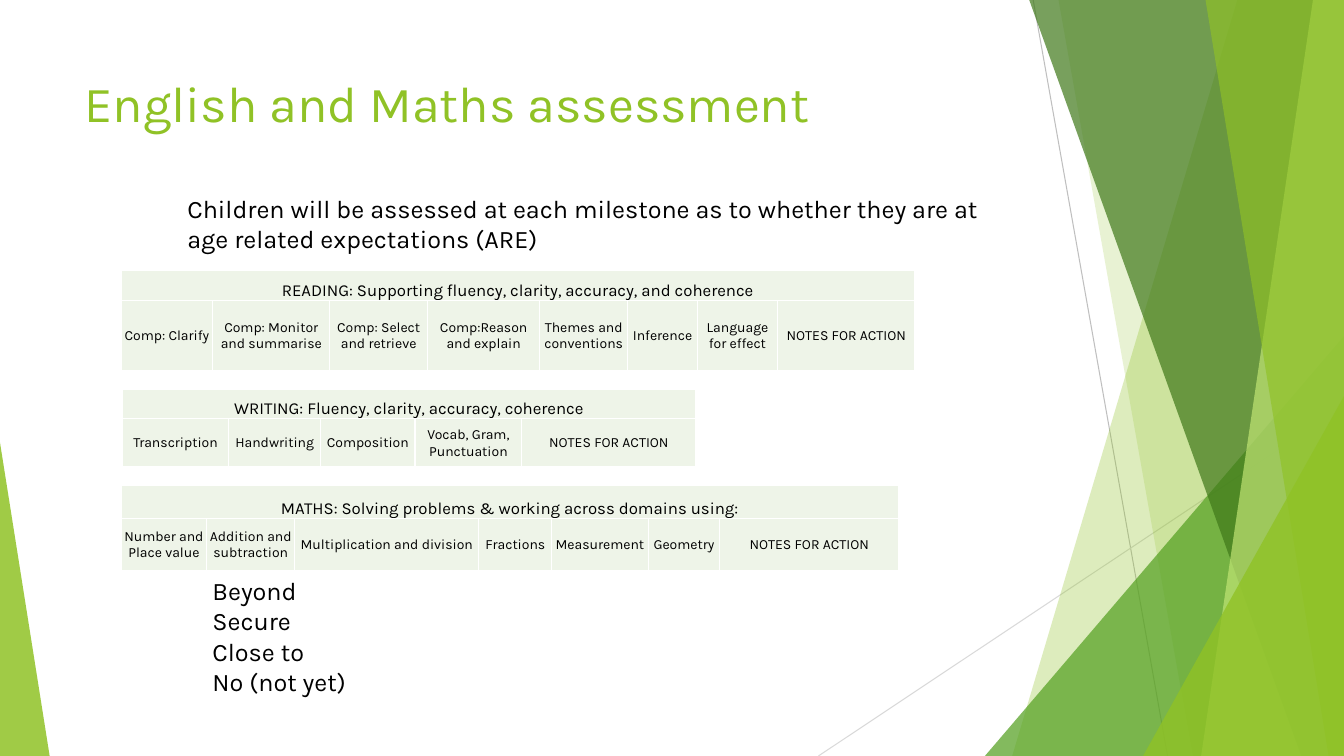
import pptx
import pptx.util
import pptx.dml.color
import pptx.enum.shapes
import pptx.enum.text
import pptx.oxml
import pptx.oxml.ns
from dataclasses import dataclass

Pt = pptx.util.Pt
WIDE, HIGH = 960, 540
FONT = "Karla"
GREEN = "90C226"
BLACK = "000000"
PALE = "EEF4E8"
WHITE = "FFFFFF"
NOTES = "NOTES FOR ACTION"


@dataclass
class Ray:
    start: tuple[float, float]
    end: tuple[float, float]
    hue: str


@dataclass
class Facet:
    top: float
    foot: float
    hue: str
    alpha: int


@dataclass
class Wedge:
    left: float
    top: float
    width: float
    apex: int
    hue: str
    alpha: int


@dataclass
class Note:
    box: tuple[float, float, float, float]
    lines: list[str]
    size: float
    hue: str
    wrap: bool


@dataclass
class Grid:
    left: float
    top: float
    rows: tuple[float, float]
    title: str
    cols: list[tuple[str, float]]


RAYS = [
    Ray((738, 0), (834, 540), "BFBFBF"),
    Ray((960, 290), (584.6, 540), "D9D9D9"),
]
DECOR = [
    Facet(884, 723, GREEN, 30),
    Facet(756, 852, GREEN, 20),
    Wedge(703.5, 240, 256.5, 1, "54A021", 72),
    Facet(735, 929.5, "3F7819", 70),
    Facet(938, 858, "C0E474", 70),
    Facet(861, 949, GREEN, 65),
    Wedge(816.5, 283, 143.5, 1, GREEN, 80),
    Wedge(0, 316, 35.5, 0, GREEN, 85),
]
NOTE_LIST = [
    Note((53.3, 48.2, 677, 104), ["English and Maths assessment"], 36, GREEN, True),
    Note((126.7, 134.6, 582.5, 72.7),
         ["Children will be assessed at each milestone as to whether they are at",
          "age related expectations (ARE)"], 18, BLACK, False),
    Note((144.7, 407.5, 113, 94.3),
         ["Beyond", "Secure", "Close to", "No (not yet)"], 18, BLACK, False),
]
GRIDS = [
    Grid(86.4, 193, (21.6, 50.2),
         "READING: Supporting fluency, clarity, accuracy, and coherence",
         [("Comp: Clarify", 65.6), ("Comp: Monitor and summarise", 83.5),
          ("Comp: Select and retrieve", 70), ("Comp:Reason and explain", 80),
          ("Themes and conventions", 63), ("Inference", 49.6),
          ("Language for effect", 57.5), (NOTES, 98)]),
    Grid(87.4, 278.2, (21, 34.2),
         "WRITING: Fluency, clarity, accuracy, coherence",
         [("Transcription", 76), ("Handwriting", 65.6), ("Composition", 67.5),
          ("Vocab, Gram, Punctuation", 76.2), (NOTES, 124.4)]),
    Grid(86.4, 347, (23.2, 37.2),
         "MATHS: Solving problems & working across domains using:",
         [("Number and Place value", 61.3), ("Addition and subtraction", 62.8),
          ("Multiplication and division", 131.6), ("Fractions", 52),
          ("Measurement", 69), ("Geometry", 51), (NOTES, 128)]),
]


def shade(hue: str):
    return pptx.dml.color.RGBColor.from_string(hue)


def dress(para, size: float, hue: str) -> None:
    para.font.name = FONT
    para.font.size = Pt(size)
    para.font.color.rgb = shade(hue)


def tint(shape, hue: str, alpha: int) -> None:
    shape.shadow.inherit = False
    shape.line.fill.background()
    shape.fill.solid()
    shape.fill.fore_color.rgb = shade(hue)
    tone = shape.fill._xPr.find(".//" + pptx.oxml.ns.qn("a:srgbClr"))
    tone.append(pptx.oxml.parse_xml(
        f'<a:alpha {pptx.oxml.ns.nsdecls("a")} val="{alpha * 1000}"/>'))


def draw_ray(slide, ray: Ray) -> None:
    line = slide.shapes.add_connector(
        pptx.enum.shapes.MSO_CONNECTOR.STRAIGHT,
        *(Pt(n) for n in ray.start + ray.end))
    line.line.color.rgb = shade(ray.hue)
    line.line.width = Pt(0.75)
    line._element.spPr.append(pptx.oxml.parse_xml(
        f'<a:effectLst {pptx.oxml.ns.nsdecls("a")}/>'))


def draw_facet(slide, facet: Facet) -> None:
    path = slide.shapes.build_freeform(Pt(facet.top), Pt(-0.6))
    path.add_line_segments([(Pt(WIDE), Pt(-0.6)), (Pt(WIDE), Pt(HIGH)),
                            (Pt(facet.foot), Pt(HIGH))], close=True)
    tint(path.convert_to_shape(), facet.hue, facet.alpha)


def draw_wedge(slide, wedge: Wedge) -> None:
    shape = slide.shapes.add_shape(
        pptx.enum.shapes.MSO_SHAPE.ISOSCELES_TRIANGLE,
        Pt(wedge.left), Pt(wedge.top), Pt(wedge.width), Pt(HIGH - wedge.top))
    shape.adjustments[0] = wedge.apex
    tint(shape, wedge.hue, wedge.alpha)


def draw_note(slide, note: Note) -> None:
    frame = slide.shapes.add_textbox(*(Pt(n) for n in note.box)).text_frame
    frame.word_wrap = note.wrap
    frame.text = "\n".join(note.lines)
    for para in frame.paragraphs:
        dress(para, note.size, note.hue)


def fill_cell(cell, text: str, size: float, anchor) -> None:
    cell.text = text
    cell.vertical_anchor = anchor
    cell.margin_left = cell.margin_right = cell.margin_top = Pt(0.7)
    cell.margin_bottom = 0
    cell.fill.solid()
    cell.fill.fore_color.rgb = shade(PALE)
    para = cell.text_frame.paragraphs[0]
    para.alignment = pptx.enum.text.PP_ALIGN.CENTER
    dress(para, size, BLACK)
    props = cell._tc.get_or_add_tcPr()
    for spot, side in enumerate("LRTB"):
        props.insert(spot, pptx.oxml.parse_xml(
            f'<a:ln{side} {pptx.oxml.ns.nsdecls("a")} w="12700"><a:solidFill>'
            f'<a:srgbClr val="{WHITE}"/></a:solidFill></a:ln{side}>'))


def draw_grid(slide, grid: Grid) -> None:
    count = len(grid.cols)
    table = slide.shapes.add_table(
        2, count, Pt(grid.left), Pt(grid.top),
        Pt(sum(width for _, width in grid.cols)), Pt(sum(grid.rows))).table
    table.first_row = table.horz_banding = False
    for row, height in zip(table.rows, grid.rows):
        row.height = Pt(height)
    anchor = pptx.enum.text.MSO_ANCHOR
    for col, (label, width) in enumerate(grid.cols):
        table.columns[col].width = Pt(width)
        fill_cell(table.cell(0, col), "" if col else grid.title, 12, anchor.BOTTOM)
        fill_cell(table.cell(1, col), label, 10, anchor.MIDDLE)
    table.cell(0, 0).merge(table.cell(0, count - 1))


def main() -> None:
    deck = pptx.Presentation()
    deck.slide_width, deck.slide_height = Pt(WIDE), Pt(HIGH)
    slide = deck.slides.add_slide(deck.slide_layouts[6])
    draw = {Ray: draw_ray, Facet: draw_facet, Wedge: draw_wedge,
            Note: draw_note, Grid: draw_grid}
    for item in RAYS + DECOR + NOTE_LIST[:2] + GRIDS + NOTE_LIST[2:]:
        draw[type(item)](slide, item)
    deck.save("out.pptx")


if __name__ == "__main__":
    main()
